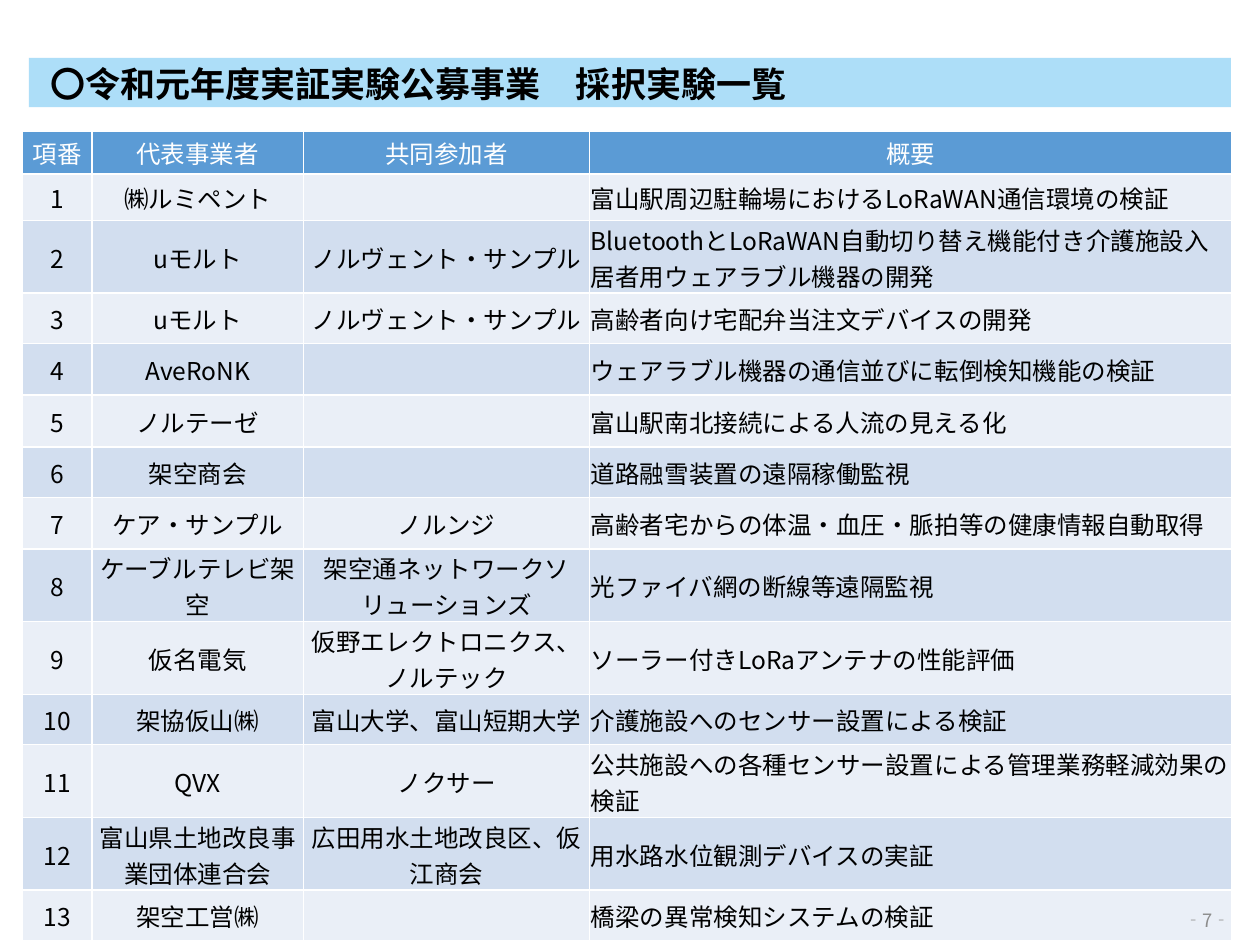
from dataclasses import dataclass

from lxml.etree import SubElement
from pptx import Presentation
from pptx.dml.color import RGBColor
from pptx.enum.shapes import MSO_SHAPE
from pptx.enum.text import MSO_ANCHOR, PP_ALIGN
from pptx.oxml.ns import qn
from pptx.util import Inches, Pt

FONT_NAME = "Noto Sans CJK JP"
WHITE = RGBColor(0xFF, 0xFF, 0xFF)
BLACK = RGBColor(0x00, 0x00, 0x00)
GRAY = RGBColor(0x8C, 0x8C, 0x8C)
TITLE_BLUE = RGBColor(0xAD, 0xDE, 0xF8)
HEADER_BLUE = RGBColor(0x5B, 0x9B, 0xD5)
ROW_COLORS = (RGBColor(0xD2, 0xDE, 0xEF), RGBColor(0xEA, 0xEF, 0xF7))

COLUMN_WIDTHS = (0.55, 1.68, 2.27, 5.1)
HEADER_HEIGHT = 0.34
HEADERS = ("項番", "代表事業者", "共同参加者", "概要")
CELL_FORMAT = {
    "margin_left": Inches(0.01),
    "margin_right": Inches(0.01),
    "margin_top": Inches(0.01),
    "margin_bottom": Inches(0),
    "vertical_anchor": MSO_ANCHOR.MIDDLE,
}
PAGE_NUMBER_FORMAT = {
    "margin_left": 0,
    "margin_right": 0,
    "margin_top": 0,
    "margin_bottom": 0,
    "vertical_anchor": MSO_ANCHOR.MIDDLE,
    "word_wrap": True,
}


@dataclass(frozen=True)
class Experiment:
    company: str
    partner: str
    summary: str
    height: float


EXPERIMENTS = (
    Experiment("㈱ルミペント", "", "富山駅周辺駐輪場におけるLoRaWAN通信環境の検証", 0.37),
    Experiment("uモルト", "ノルヴェント・サンプル",
               "BluetoothとLoRaWAN自動切り替え機能付き介護施設入居者用ウェアラブル機器の開発", 0.5),
    Experiment("uモルト", "ノルヴェント・サンプル", "高齢者向け宅配弁当注文デバイスの開発", 0.4),
    Experiment("AveRoNK", "", "ウェアラブル機器の通信並びに転倒検知機能の検証", 0.41),
    Experiment("ノルテーゼ", "", "富山駅南北接続による人流の見える化", 0.41),
    Experiment("架空商会", "", "道路融雪装置の遠隔稼働監視", 0.4),
    Experiment("ケア・サンプル", "ノルンジ", "高齢者宅からの体温・血圧・脈拍等の健康情報自動取得", 0.41),
    Experiment("ケーブルテレビ架空", "架空通ネットワークソリューションズ", "光ファイバ網の断線等遠隔監視", 0.5),
    Experiment("仮名電気", "仮野エレクトロニクス、ノルテック", "ソーラー付きLoRaアンテナの性能評価", 0.5),
    Experiment("架協仮山㈱", "富山大学、富山短期大学", "介護施設へのセンサー設置による検証", 0.4),
    Experiment("QVX", "ノクサー", "公共施設への各種センサー設置による管理業務軽減効果の検証", 0.39),
    Experiment("富山県土地改良事業団体連合会", "広田用水土地改良区、仮江商会", "用水路水位観測デバイスの実証", 0.5),
    Experiment("架空工営㈱", "", "橋梁の異常検知システムの検証", 0.4),
)


def apply_format(target, values: dict) -> None:
    for name, value in values.items():
        setattr(target, name, value)


def write_text(text_frame, text: str, size: float, color: RGBColor,
               alignment=PP_ALIGN.LEFT, bold: bool = False) -> None:
    paragraph = text_frame.paragraphs[0]
    paragraph.alignment = alignment
    run = paragraph.add_run()
    run.text = text
    apply_format(run.font, {"name": FONT_NAME, "size": Pt(size), "bold": bold})
    run.font.color.rgb = color
    east_asian = SubElement(run.font._element, qn("a:ea"))
    east_asian.set("typeface", FONT_NAME)


def add_cell_borders(cell, color: RGBColor) -> None:
    """Draw 1 pt lines on all four sides; they must precede the cell fill."""
    properties = cell._tc.get_or_add_tcPr()
    for side in ("lnL", "lnR", "lnT", "lnB"):
        line = SubElement(properties, qn(f"a:{side}"), w=str(Pt(1)))
        line_fill = SubElement(line, qn("a:solidFill"))
        SubElement(line_fill, qn("a:srgbClr"), val=str(color))


def fill_cell(cell, text: str, fill: RGBColor, color: RGBColor, alignment) -> None:
    apply_format(cell, CELL_FORMAT)
    add_cell_borders(cell, WHITE)
    cell.fill.solid()
    cell.fill.fore_color.rgb = fill
    if text:
        write_text(cell.text_frame, text, 14, color, alignment)


def add_experiment_table(slide) -> None:
    heights = (HEADER_HEIGHT, *(experiment.height for experiment in EXPERIMENTS))
    table = slide.shapes.add_table(
        len(heights), len(COLUMN_WIDTHS), Inches(0.18), Inches(1.04),
        Inches(sum(COLUMN_WIDTHS)), Inches(sum(heights))).table
    for column, width in zip(table.columns, COLUMN_WIDTHS):
        column.width = Inches(width)
    for row, height in zip(table.rows, heights):
        row.height = Inches(height)

    for column_index, header in enumerate(HEADERS):
        fill_cell(table.cell(0, column_index), header, HEADER_BLUE, WHITE, PP_ALIGN.CENTER)
    for number, experiment in enumerate(EXPERIMENTS, start=1):
        texts = (str(number), experiment.company, experiment.partner, experiment.summary)
        for column_index, text in enumerate(texts):
            is_summary = column_index == len(HEADERS) - 1
            fill_cell(table.cell(number, column_index), text, ROW_COLORS[number % 2], BLACK,
                      PP_ALIGN.LEFT if is_summary else PP_ALIGN.CENTER)


def add_page_number(slide) -> None:
    text_box = slide.shapes.add_textbox(Inches(9.01), Inches(7.1), Inches(0.76), Inches(0.4))
    apply_format(text_box.text_frame, PAGE_NUMBER_FORMAT)
    write_text(text_box.text_frame, "‐7‐", 10.5, GRAY, PP_ALIGN.RIGHT)


def add_title(slide) -> None:
    group = slide.shapes.add_group_shape()
    band = group.shapes.add_shape(
        MSO_SHAPE.RECTANGLE, Inches(0.23), Inches(0.46), Inches(9.54), Inches(0.39))
    band.shadow.inherit = False
    band.fill.solid()
    band.fill.fore_color.rgb = TITLE_BLUE
    band.line.fill.background()
    text_box = group.shapes.add_textbox(Inches(0.3), Inches(0.45), Inches(7.53), Inches(0.44))
    text_box.text_frame.word_wrap = True
    write_text(text_box.text_frame, "〇令和元年度実証実験公募事業　採択実験一覧", 20, BLACK, bold=True)


def main() -> None:
    presentation = Presentation()
    presentation.slide_width = Inches(10)
    presentation.slide_height = Inches(7.5)
    slide = presentation.slides.add_slide(presentation.slide_layouts[6])
    add_experiment_table(slide)
    add_page_number(slide)
    add_title(slide)
    presentation.save("out.pptx")


if __name__ == "__main__":
    main()
